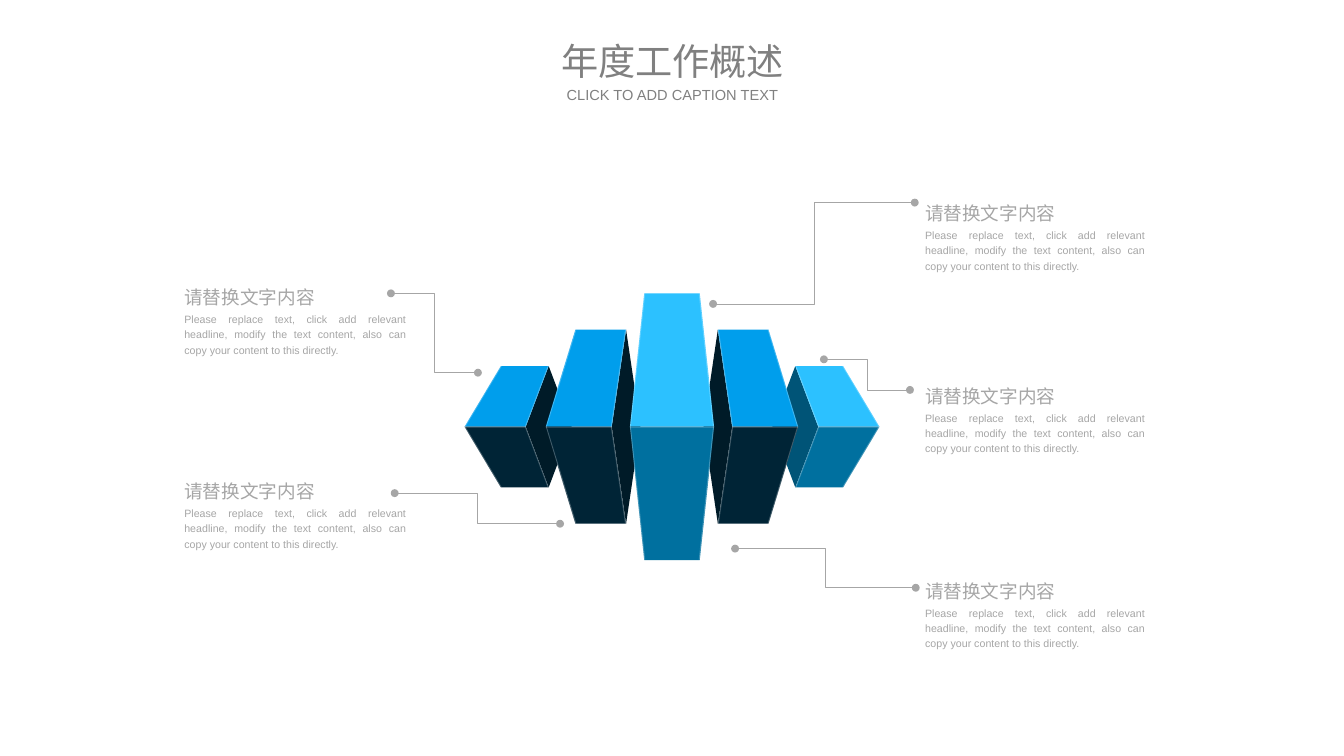
from lxml import etree
from pptx import Presentation
from pptx import util as u
from pptx.dml.color import RGBColor
from pptx.enum import shapes, text
from pptx.oxml import ns

WIDTH, HEIGHT = 14.06, 7.91
HORIZON = 4.465
EDGE = 0.01

DARK = ("001B28", "009EEC", "002436")
LIGHT = ("005477", "2CC1FF", "00709F")
OUTER_BLOCK = (4.86, 5.24, 5.5, 5.74, 0.635)
INNER_BLOCK = (5.71, 6.02, 6.4, 6.55, 1.015)
CENTRE_BLOCK = (6.59, 6.74, 1.395)

HEADING = "请替换文字内容"
BODY = (
    "Please replace text, click add relevant headline, modify the text content, "
    "also can copy your content to this directly."
)
CAPTIONS = [
    (1.83, 2.9, 2.52),
    (1.83, 4.93, 2.52),
    (9.58, 2.02, 2.5),
    (9.58, 5.97, 2.5),
    (9.58, 3.93, 2.5),
]
LEADERS = [
    ((5, 3.9), (4.09, 3.07)),
    ((5.86, 5.48), (4.13, 5.16)),
    ((9.57, 2.12), (7.46, 3.18)),
    ((9.52, 4.08), (8.62, 3.76)),
    ((9.58, 6.15), (7.69, 5.74)),
]


def color(value):
    return RGBColor.from_string(value)


def mirror(points):
    return [(WIDTH - x, y) for x, y in points]


class Deck:
    font = "Arial"
    title_color = "808080"
    muted = "A6A6A6"
    highlight = "FFFFFF"
    highlight_alpha = 25000

    def __init__(self):
        self.presentation = Presentation()
        self.presentation.slide_width = u.Inches(WIDTH)
        self.presentation.slide_height = u.Inches(HEIGHT)
        self.slide = self.presentation.slides.add_slide(self.presentation.slide_layouts[6])

    def polygon(self, points, fill, alpha=None):
        corners = [(u.Inches(x), u.Inches(y)) for x, y in points]
        builder = self.slide.shapes.build_freeform(*corners[0])
        builder.add_line_segments(corners[1:], close=True)
        shape = builder.convert_to_shape()
        shape.shadow.inherit = False
        shape.fill.solid()
        shape.fill.fore_color.rgb = color(fill)
        shape.line.fill.background()
        if alpha is not None:
            value = shape.element.spPr.find(".//" + ns.qn("a:srgbClr"))
            etree.SubElement(value, ns.qn("a:alpha"), val=str(alpha))

    def seam(self, left, right):
        points = [(left, HORIZON), (right, HORIZON), (right, HORIZON + EDGE), (left, HORIZON + EDGE)]
        self.polygon(points, self.highlight, self.highlight_alpha)

    def edge(self, tip, bend, half, offset, mirrored):
        line = [(tip, HORIZON - half), (bend, HORIZON), (tip, HORIZON + half)]
        points = line + [(x + offset, y) for x, y in reversed(line)]
        self.polygon(mirror(points) if mirrored else points, self.highlight, self.highlight_alpha)

    def block(self, dimensions, colors, mirrored):
        outer, far_tip, hinge, near_tip, half = dimensions
        top, bottom = HORIZON - half, HORIZON + half
        back = 2 * near_tip - hinge
        faces = [
            [(hinge, HORIZON), (near_tip, top), (back, HORIZON), (near_tip, bottom)],
            [(hinge, HORIZON), (near_tip, top), (far_tip, top), (outer, HORIZON)],
            [(hinge, HORIZON), (near_tip, bottom), (far_tip, bottom), (outer, HORIZON)],
        ]
        for points, fill in zip(faces, colors):
            self.polygon(mirror(points) if mirrored else points, fill)

    def centre_block(self, dimensions, colors):
        outer, tip, half = dimensions
        for end, fill in ((HORIZON - half, colors[1]), (HORIZON + half, colors[2])):
            left = [(outer, HORIZON), (tip, end)]
            self.polygon(left + mirror(reversed(left)), fill)

    def text(self, content, box, size, fill, align, spacing=None, title=False):
        frame = self.slide.shapes.add_textbox(*[u.Inches(length) for length in box]).text_frame
        frame.word_wrap = True
        if title:
            frame.margin_left = frame.margin_right = frame.margin_top = frame.margin_bottom = 0
            frame.vertical_anchor = text.MSO_ANCHOR.MIDDLE
        paragraph = frame.paragraphs[0]
        paragraph.alignment = align
        if spacing:
            paragraph.line_spacing = spacing
        run = paragraph.add_run()
        run.text = content
        run.font.name = self.font
        run.font.size = u.Pt(size)
        run.font.color.rgb = color(fill)

    def title(self, content, top, height, size):
        self.text(content, (5.77, top, 2.53, height), size, self.title_color,
                  text.PP_ALIGN.CENTER, title=True)

    def caption(self, left, top, width):
        justify = text.PP_ALIGN.JUSTIFY
        self.text(BODY, (left, top + 0.3, width, 0.57), 8, self.muted, justify, 1.2)
        self.text(HEADING, (left, top, 1.65, 0.36), 14, self.muted, justify, 1.2)

    def leader(self, start, end):
        points = [u.Inches(length) for length in start + end]
        connector = self.slide.shapes.add_connector(shapes.MSO_CONNECTOR.ELBOW, *points)
        connector.line.color.rgb = color(self.muted)
        connector.line.width = u.Pt(0.5)
        properties = connector.element.spPr
        line = properties.find(ns.qn("a:ln"))
        for name in ("a:headEnd", "a:tailEnd"):
            etree.SubElement(line, ns.qn(name), type="oval")
        etree.SubElement(properties, ns.qn("a:effectLst"))


def main():
    deck = Deck()
    blocks = [
        (OUTER_BLOCK, DARK, False),
        (INNER_BLOCK, DARK, False),
        (OUTER_BLOCK, LIGHT, True),
        (INNER_BLOCK, DARK, True),
    ]
    for block in blocks:
        deck.block(*block)
    deck.centre_block(CENTRE_BLOCK, LIGHT)

    for (outer, far_tip, hinge, near_tip, half), _, mirrored in blocks:
        left, right = (WIDTH - hinge, WIDTH - outer) if mirrored else (outer, hinge)
        deck.seam(left, right)
        deck.edge(far_tip, outer, half, EDGE, mirrored)
        deck.edge(near_tip, hinge, half, -EDGE, mirrored)
    outer, tip, half = CENTRE_BLOCK
    deck.seam(outer, WIDTH - outer)
    for mirrored in (True, False):
        deck.edge(tip, outer, half, EDGE, mirrored)

    for caption in CAPTIONS:
        deck.caption(*caption)
    for leader in LEADERS:
        deck.leader(*leader)
    deck.title("年度工作概述", 0.39, 0.49, 28)
    deck.title("CLICK TO ADD CAPTION TEXT", 0.9, 0.19, 11)
    deck.presentation.save("out.pptx")


if __name__ == "__main__":
    main()
